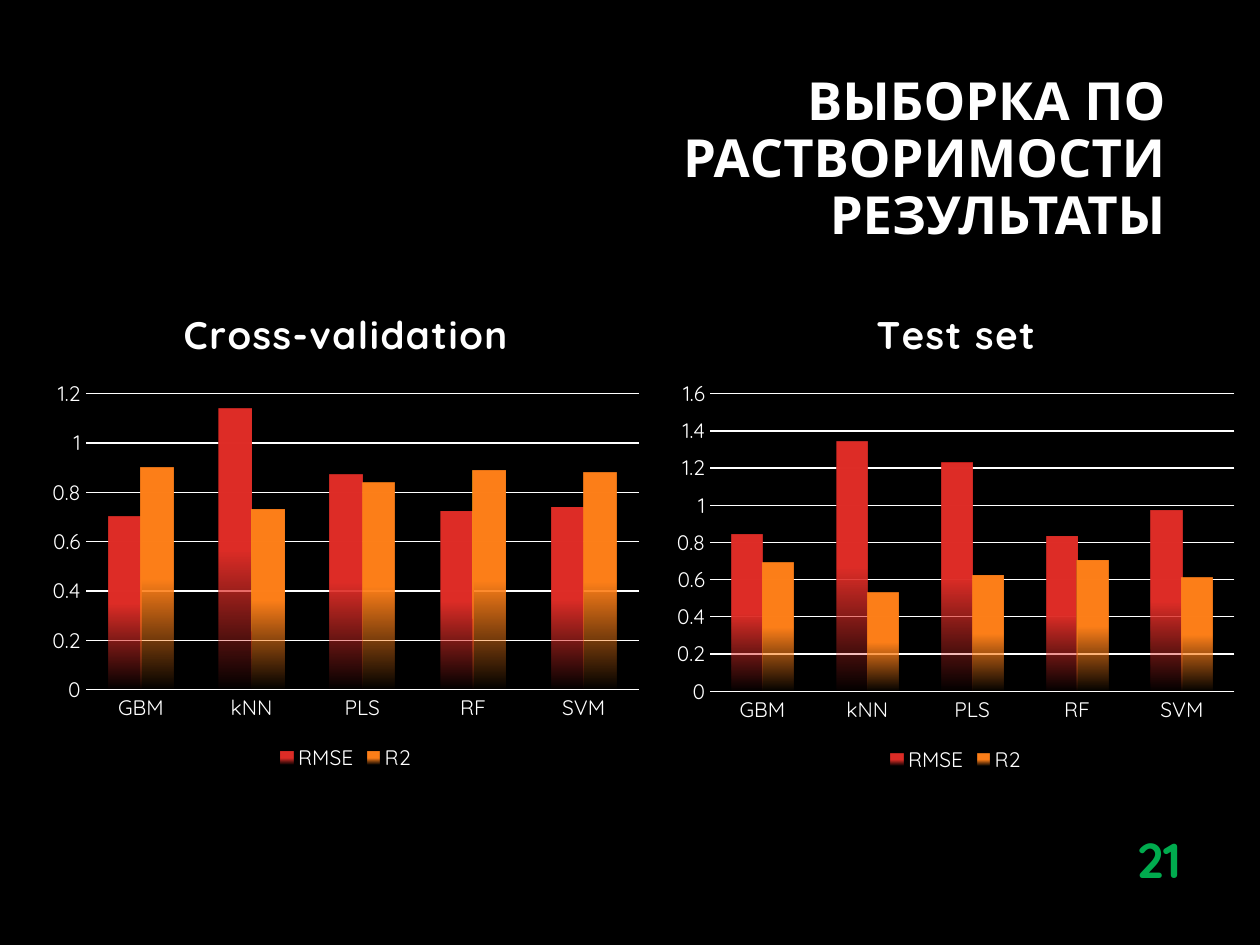
import pptx
import pptx.chart.data
import pptx.dml.color
import pptx.enum.chart
import pptx.enum.text
import pptx.util
from lxml import etree

Cm = pptx.util.Cm
Pt = pptx.util.Pt
RGBColor = pptx.dml.color.RGBColor

BLACK = RGBColor(0x00, 0x00, 0x00)
WHITE = RGBColor(0xFF, 0xFF, 0xFF)
RED = RGBColor(0xDF, 0x2E, 0x28)
ORANGE = RGBColor(0xFE, 0x80, 0x1A)
GREEN = RGBColor(0x00, 0xAB, 0x4E)
FONT = "Quicksand"

# Content
TITLE = "ВЫБОРКА ПО РАСТВОРИМОСТИ\vРЕЗУЛЬТАТЫ"
PAGE_NUMBER = "21"
METHODS = ["GBM", "kNN", "PLS", "RF", "SVM"]
SERIES_COLORS = {"RMSE": RED, "R2": ORANGE}
CHARTS = [
    {
        "title": "Test set",
        "box": (13.41, 5.72, 11.71, 9.96),
        "maximum": 1.6,
        "values": {"RMSE": [0.84, 1.34, 1.23, 0.83, 0.97],
                   "R2": [0.69, 0.53, 0.62, 0.7, 0.61]},
    },
    {
        "title": "Cross-validation",
        "box": (0.81, 5.72, 12.32, 9.93),
        "maximum": 1.2,
        "values": {"RMSE": [0.7, 1.14, 0.87, 0.72, 0.74],
                   "R2": [0.9, 0.73, 0.84, 0.89, 0.88]},
    },
]


def set_values(target, **values):
    for name, value in values.items():
        setattr(target, name, value)


def set_font(font, size, color=WHITE, bold=False):
    set_values(font, name=FONT, size=Pt(size), bold=bold)
    font.color.rgb = color


def write_text(shape, text, size, color, line_spacing=1.0):
    frame = shape.text_frame
    frame.text = text
    set_values(frame, word_wrap=True,
               auto_size=pptx.enum.text.MSO_AUTO_SIZE.NONE,
               vertical_anchor=pptx.enum.text.MSO_ANCHOR.MIDDLE)
    paragraph = frame.paragraphs[0]
    set_values(paragraph, alignment=pptx.enum.text.PP_ALIGN.RIGHT,
               line_spacing=line_spacing)
    for run in paragraph.runs:
        set_font(run.font, size, color, bold=True)


def fade_series(series, color):
    """Solid upper half that fades to transparent at the bottom."""
    fill = series.format.fill
    fill.gradient()
    fill.gradient_angle = 270
    for stop, position in zip(fill.gradient_stops, (0.5, 1.0)):
        stop.color.rgb = color
        stop.position = position
    last_color = series._element.xpath(".//a:gs[last()]/a:srgbClr")[0]
    etree.SubElement(last_color, pptx.oxml.ns.qn("a:alpha"), val="0")


def add_bar_chart(slide, content):
    data = pptx.chart.data.CategoryChartData()
    data.categories = METHODS
    for name, values in content["values"].items():
        data.add_series(name, values)
    chart = slide.shapes.add_chart(
        pptx.enum.chart.XL_CHART_TYPE.COLUMN_CLUSTERED,
        *map(Cm, content["box"]), data).chart
    set_font(chart.font, 10)

    # Chart title
    chart.has_title = True
    title_frame = chart.chart_title.text_frame
    title_frame.text = content["title"]
    run = title_frame.paragraphs[0].runs[0]
    set_font(run.font, 22, bold=True)
    run.font._element.set("spc", "100")
    chart.chart_title.include_in_layout = False

    # Legend
    chart.has_legend = True
    set_values(chart.legend, include_in_layout=False,
               position=pptx.enum.chart.XL_LEGEND_POSITION.BOTTOM)
    set_font(chart.legend.font, 12)

    # Axes
    for axis in (chart.category_axis, chart.value_axis):
        set_values(axis, major_tick_mark=pptx.enum.chart.XL_TICK_MARK.NONE,
                   minor_tick_mark=pptx.enum.chart.XL_TICK_MARK.NONE)
        axis.format.line.fill.background()
        set_font(axis.tick_labels.font, 12)
    set_values(chart.value_axis, minimum_scale=0, major_unit=0.2,
               maximum_scale=content["maximum"], has_major_gridlines=True)
    grid_line = chart.value_axis.major_gridlines.format.line
    grid_line.color.rgb = WHITE
    grid_line.width = Pt(0.75)

    # Columns
    plot = chart.plots[0]
    set_values(plot, gap_width=140, overlap=0, vary_by_categories=False)
    for series in plot.series:
        series.invert_if_negative = False
        fade_series(series, SERIES_COLORS[series.name])


def main():
    presentation = pptx.Presentation()
    set_values(presentation, slide_width=Cm(25.4), slide_height=Cm(19.05))
    slide = presentation.slides.add_slide(presentation.slide_layouts[5])
    slide.background.fill.solid()
    slide.background.fill.fore_color.rgb = BLACK

    # Title
    title = slide.shapes.title
    set_values(title, left=Cm(6.05), top=Cm(1.45),
               width=Cm(17.7), height=Cm(3.58))
    write_text(title, TITLE, 30, WHITE, line_spacing=0.9)
    title.text_frame.margin_left = Cm(2.5)

    # Charts
    for content in CHARTS:
        add_bar_chart(slide, content)

    # Page number
    number = slide.shapes.add_textbox(Cm(22.1), Cm(16.81), Cm(1.96), Cm(1.02))
    write_text(number, PAGE_NUMBER, 28, GREEN)

    presentation.save("out.pptx")


if __name__ == "__main__":
    main()
